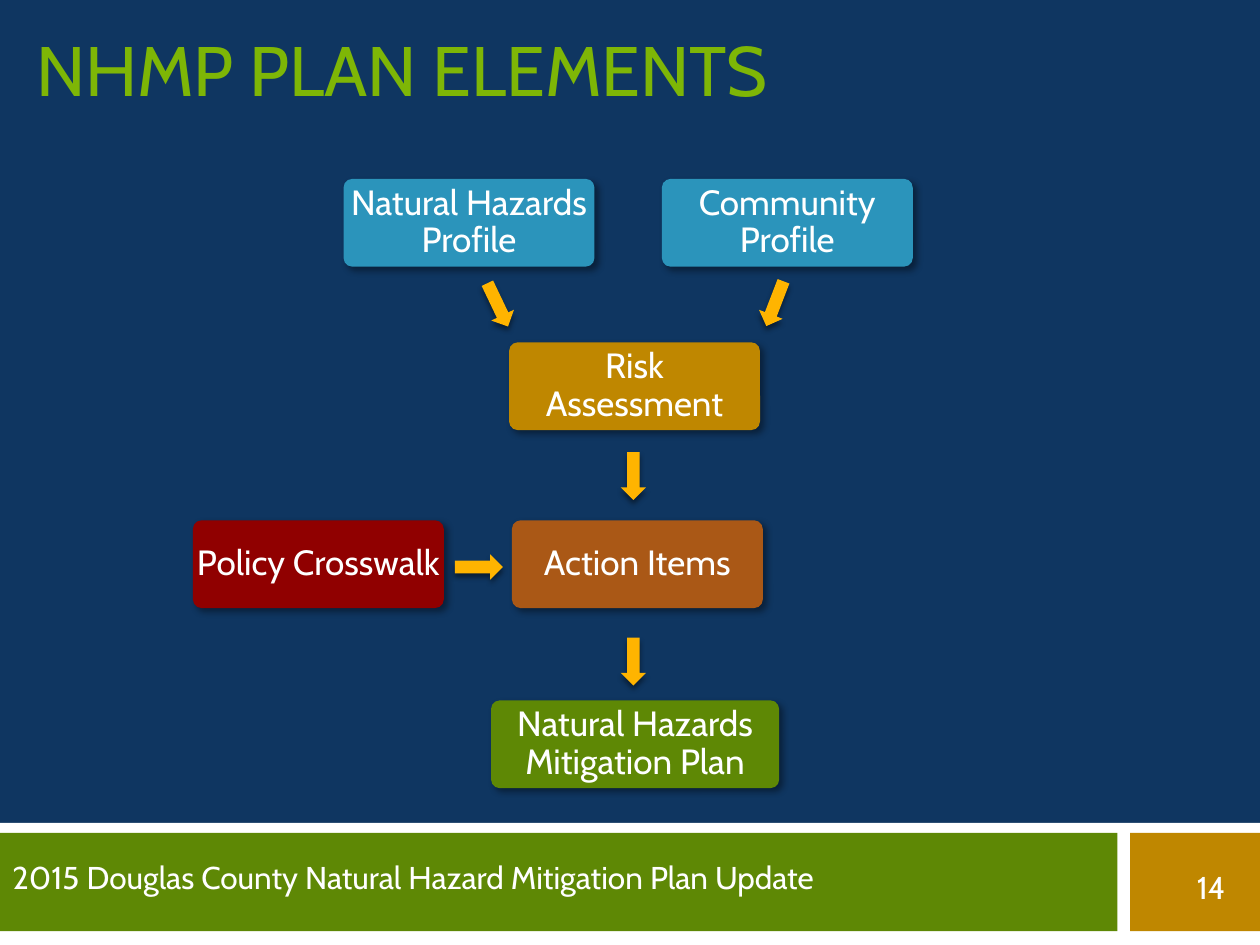
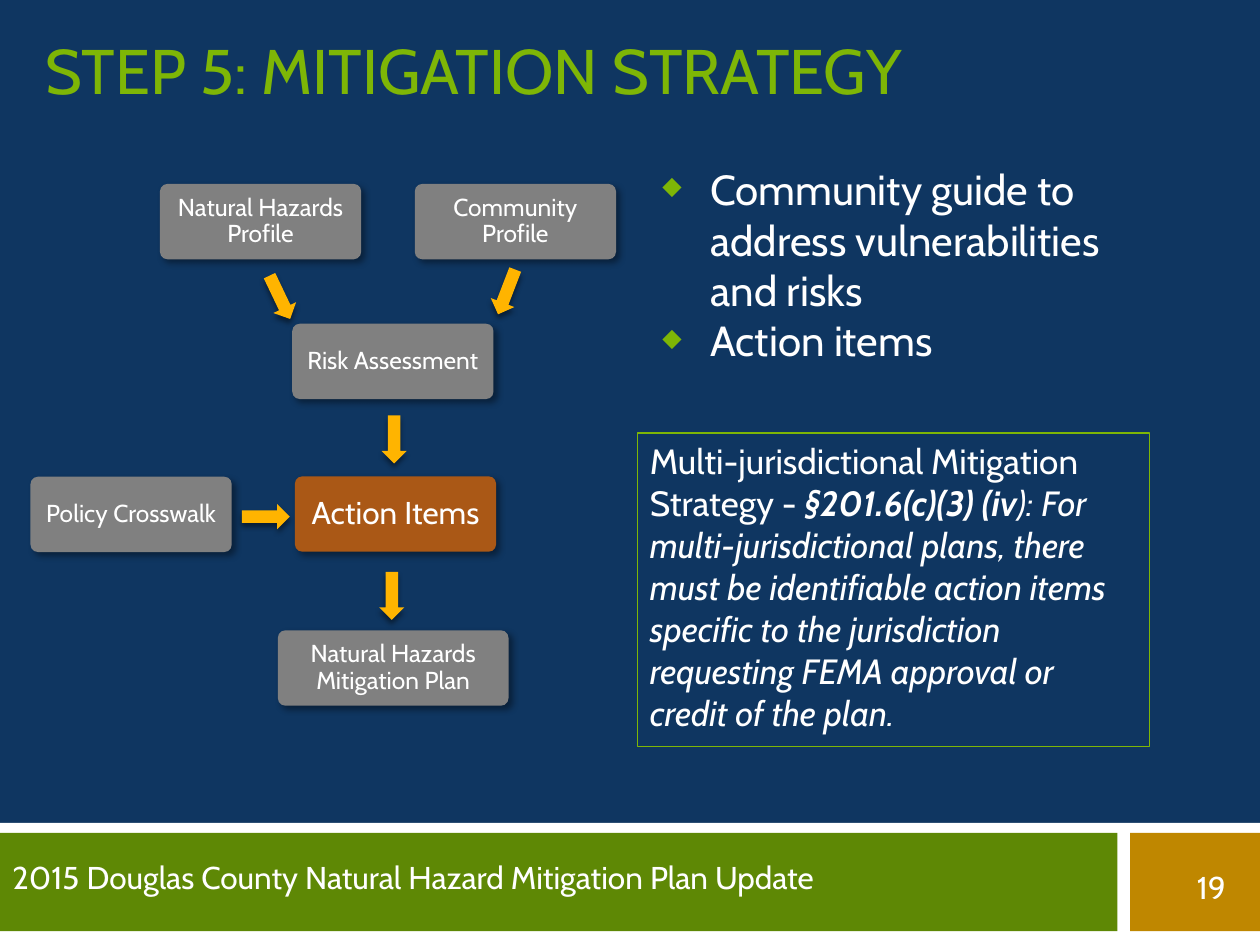
from lxml import etree
from pptx import Presentation
from pptx.dml.color import RGBColor
from pptx.enum.shapes import MSO_SHAPE
from pptx.enum.text import MSO_ANCHOR, PP_ALIGN
from pptx.oxml.ns import qn
from pptx.util import Pt

RECT = MSO_SHAPE.RECTANGLE
ROUNDED = MSO_SHAPE.ROUNDED_RECTANGLE
ARROW = MSO_SHAPE.RIGHT_ARROW
TOP, MIDDLE, BOTTOM = MSO_ANCHOR.TOP, MSO_ANCHOR.MIDDLE, MSO_ANCHOR.BOTTOM
LEFT, CENTER = PP_ALIGN.LEFT, PP_ALIGN.CENTER

FONT = "Cabin"
NAVY, WHITE, LIME = "0F3661", "FFFFFF", "7EB606"
GREEN, OCHRE, AMBER = "5E8805", "BF8700", "FFB400"
BLUE, RUST, RED, GRAY = "2B94BB", "AA5816", "900000", "808080"

FOOTER = "2015 Douglas County Natural Hazard Mitigation Plan Update"
STEPS = ["Natural Hazards Profile", "Community Profile", "Risk Assessment",
         "Action Items", "Policy Crosswalk", "Natural Hazards Mitigation Plan"]
STEP_INSETS = [1.5, 1.5, 1.5, 0.6, 0.6, 0.6]
# Policy to action, risk to action, action to plan, hazards to risk, community to risk
ARROW_ANGLES = [0, 90, 90, 64.5, 111]
ARROW_SIZE = (27.4, 14.4)


def color(hex_code):
    return RGBColor.from_string(hex_code)


def style(paragraph, size, hex_code=WHITE, align=LEFT):
    paragraph.alignment = align
    paragraph.font.name = FONT
    paragraph.font.size = Pt(size)
    paragraph.font.color.rgb = color(hex_code)


def add_filled(slide, kind, box, fill):
    shape = slide.shapes.add_shape(kind, *map(Pt, box))
    shape.shadow.inherit = False
    shape.fill.solid()
    shape.fill.fore_color.rgb = color(fill)
    shape.line.fill.background()
    return shape


def add_shadow(shape, blur, distance, angle, opacity):
    effects = shape._element.spPr.find(qn("a:effectLst"))
    outer = etree.SubElement(
        effects, qn("a:outerShdw"), blurRad=str(Pt(blur)), dist=str(Pt(distance)),
        dir=str(angle * 60000), algn="ctr", rotWithShape="0")
    black = etree.SubElement(outer, qn("a:srgbClr"), val="000000")
    etree.SubElement(black, qn("a:alpha"), val=str(opacity * 1000))


def add_text(slide, box, text, size, hex_code=WHITE, anchor=TOP):
    frame = slide.shapes.add_textbox(*map(Pt, box)).text_frame
    frame.word_wrap = True
    frame.vertical_anchor = anchor
    frame.text = text
    for paragraph in frame.paragraphs:
        style(paragraph, size, hex_code)
    return frame


def add_bullets(slide, box, items, size):
    frame = slide.shapes.add_textbox(*map(Pt, box)).text_frame
    frame.word_wrap = True
    frame.text = "\n".join(items)
    for paragraph in frame.paragraphs:
        props = paragraph._p.get_or_add_pPr()
        props.set("marL", str(Pt(63.4)))
        props.set("indent", str(Pt(-27.4)))
        bullet_color = etree.SubElement(props, qn("a:buClr"))
        etree.SubElement(bullet_color, qn("a:srgbClr"), val=LIME)
        etree.SubElement(props, qn("a:buSzPct"), val="60000")
        etree.SubElement(props, qn("a:buChar"), char="◆")
        style(paragraph, size)


def add_step(slide, box, text, fill, size, inset):
    step = add_filled(slide, ROUNDED, box, fill)
    step.adjustments[0] = 0.1
    add_shadow(step, 4, 3, 45, 40)
    frame = step.text_frame
    frame.word_wrap = True
    frame.vertical_anchor = MIDDLE
    frame.margin_left = frame.margin_right = Pt(inset)
    frame.margin_top = frame.margin_bottom = Pt(inset)
    frame.text = text
    frame.paragraphs[0].line_spacing = 0.9
    style(frame.paragraphs[0], size, align=CENTER)


def add_flow(slide, spots, widths, height, fills, sizes, arrow_spots):
    for spot, width, text, fill, size, inset in zip(
            spots, widths, STEPS, fills, sizes, STEP_INSETS):
        add_step(slide, (*spot, width, height), text, fill, size, inset)
    for spot, angle in zip(arrow_spots, ARROW_ANGLES):
        arrow = add_filled(slide, ARROW, (*spot, *ARROW_SIZE), AMBER)
        arrow.rotation = angle
        add_shadow(arrow, 3, 2.4, 90, 45)


def add_rule_box(slide, box, parts, size):
    rule = slide.shapes.add_shape(RECT, *map(Pt, box))
    rule.shadow.inherit = False
    rule.fill.background()
    rule.line.color.rgb = color(LIME)
    rule.line.width = Pt(0.75)
    frame = rule.text_frame
    frame.word_wrap = True
    frame.vertical_anchor = TOP
    paragraph = frame.paragraphs[0]
    for text, bold, italic in parts:
        run = paragraph.add_run()
        run.text = text
        run.font.bold = bold
        run.font.italic = italic
    style(paragraph, size)


def new_slide(deck, title, title_spot, title_size, number):
    slide = deck.slides.add_slide(deck.slide_layouts[6])
    slide.background.fill.solid()
    slide.background.fill.fore_color.rgb = color(NAVY)
    # Footer bands
    add_filled(slide, RECT, (0, 470.2, 720, 69.8), WHITE)
    add_filled(slide, RECT, (645.8, 475.9, 74.2, 56.2), OCHRE)
    add_filled(slide, RECT, (0, 475.9, 638.6, 56.2), GREEN)
    add_text(slide, (0, 486.7, 638.6, 28.8), FOOTER, 18)
    add_text(slide, (676.8, 492.5, 43.2, 30.2), number, 18)
    # Title
    add_text(slide, (*title_spot, 674, 51.1), title, title_size, LIME, BOTTOM)
    return slide


def main():
    deck = Presentation()
    deck.slide_width, deck.slide_height = Pt(720), Pt(540)

    # Plan elements
    elements = new_slide(deck, "NHMP PLAN ELEMENTS", (13.7, 15.8), 40, "14")
    add_flow(
        elements,
        spots=[(196.3, 102.2), (378.2, 102.2), (290.9, 195.6),
               (292.5, 297.3), (110.2, 297.3), (280.6, 400.2)],
        widths=[143.4] * 5 + [164.7], height=50.2,
        fills=[BLUE, BLUE, OCHRE, RUST, RED, GREEN], sizes=[20] * 6,
        arrow_spots=[(259.9, 316.8), (348.2, 264.8), (348.2, 370.8),
                     (270.7, 167), (429.1, 166.3)])

    # Mitigation strategy
    strategy = new_slide(deck, "STEP 5: MITIGATION STRATEGY", (18.7, 13.7), 36, "19")
    add_flow(
        strategy,
        spots=[(91.4, 105.1), (237, 105.1), (167, 185),
               (168.5, 272.2), (17.4, 272.4), (158.8, 360.2)],
        widths=[115] * 5 + [131.8], height=43.1,
        fills=[GRAY] * 3 + [RUST] + [GRAY] * 2, sizes=[14] * 3 + [18] + [14] * 2,
        arrow_spots=[(138.2, 288), (211.5, 243.9), (210.2, 333.3),
                     (146.2, 162.7), (275.8, 159.6)])
    add_bullets(strategy, (335.5, 90, 321.8, 123.8),
                ["Community guide to address vulnerabilities and risks",
                 "Action items"], 24)
    add_rule_box(strategy, (364.3, 247.4, 292.7, 179.2), [
        ("Multi-jurisdictional Mitigation Strategy - ", False, False),
        ("§201.6(c)(3) (iv", True, True),
        ("): For multi-jurisdictional plans, there must be identifiable action "
         "items specific to the jurisdiction requesting FEMA approval or credit "
         "of the plan.", False, True)], 20)

    deck.save("out.pptx")


if __name__ == "__main__":
    main()
